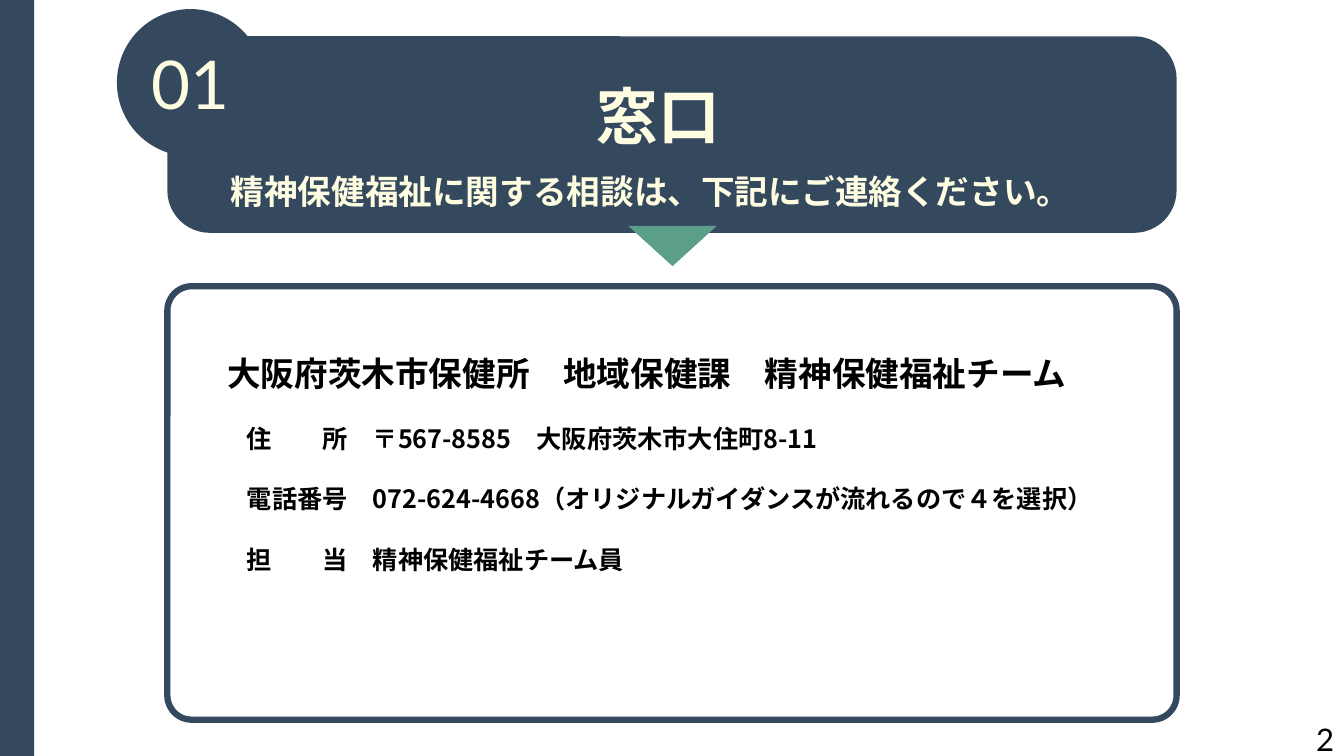
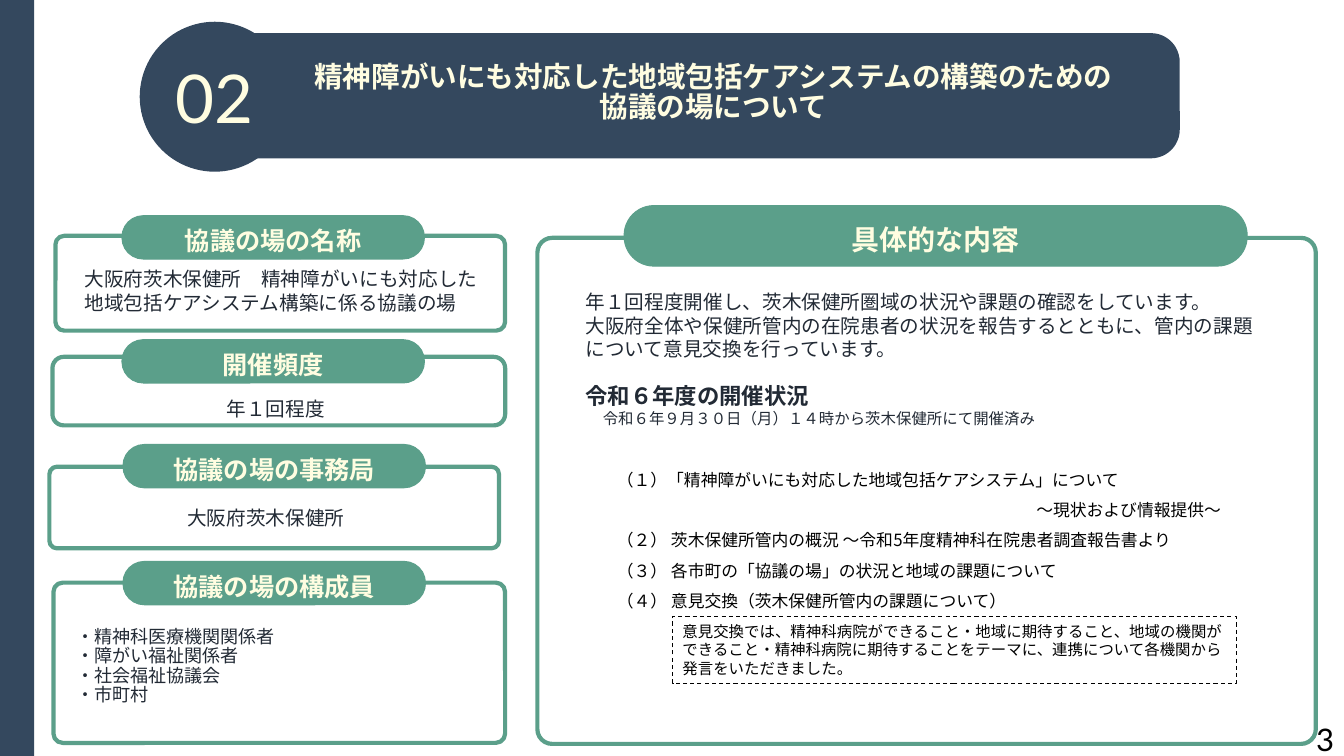
from lxml import etree
from pptx import Presentation
from pptx.dml.color import RGBColor
from pptx.enum.dml import MSO_LINE
from pptx.enum.shapes import MSO_SHAPE
from pptx.enum.text import MSO_ANCHOR, PP_ALIGN
from pptx.oxml.ns import qn
from pptx.util import Pt

PX = 9144  # EMU in one px, 100 px to the inch
COLORS = {"navy": "34485E", "green": "5B9F8A", "cream": "FFFDE1",
          "ink": "222A35", "black": "000000", "white": "FFFFFF"}
JAPANESE, LATIN, HEADING = "Noto Sans CJK JP", "Lato", "Roboto"
RECT, ROUND = MSO_SHAPE.RECTANGLE, MSO_SHAPE.ROUNDED_RECTANGLE
OVAL, TRIANGLE = MSO_SHAPE.OVAL, MSO_SHAPE.ISOSCELES_TRIANGLE
LEFT, CENTER, RIGHT = PP_ALIGN.LEFT, PP_ALIGN.CENTER, PP_ALIGN.RIGHT
TIGHT, SINGLE, WIDE = 0.9, 1.0, 1.5


def place(slide, box, preset=None, fill=None, line=None, weight=0.75, corner=None):
    """Add a preset shape, or a text box when there is no preset."""
    left, top, width, height = (value * PX for value in box)
    if preset is None:
        shape = slide.shapes.add_textbox(left, top, width, height)
        shape.text_frame.word_wrap = True
        return shape
    shape = slide.shapes.add_shape(preset, left, top, width, height)
    shape.shadow.inherit = False
    if corner is not None:
        shape.adjustments[0] = corner
    if fill:
        shape.fill.solid()
        shape.fill.fore_color.rgb = RGBColor.from_string(COLORS[fill])
    else:
        shape.fill.background()
    if line:
        shape.line.color.rgb = RGBColor.from_string(COLORS[line])
        shape.line.width = Pt(weight)
    else:
        shape.line.fill.background()
    return shape


def add_lines(shape, lines, size, color, bold=False, align=LEFT, spacing=SINGLE,
              font=JAPANESE, before=0, indent=0, right_indent=0):
    """Append one paragraph per line to the text of the shape."""
    frame = shape.text_frame
    for line in lines:
        paragraph = frame.add_paragraph() if frame.text else frame.paragraphs[0]
        paragraph.alignment = align
        paragraph.line_spacing = spacing
        paragraph.space_before = Pt(before)
        properties = paragraph._p.get_or_add_pPr()
        properties.set("marL", str(indent * PX))
        properties.set("marR", str(right_indent * PX))
        run = paragraph.add_run()
        run.text = line
        run.font.size = Pt(size)
        run.font.bold = bold
        run.font.name = font
        run.font.color.rgb = RGBColor.from_string(COLORS[color])
        run_properties = run._r.get_or_add_rPr()
        run_properties.set("lang", "ja-JP")
        etree.SubElement(run_properties, qn("a:ea")).set("typeface", JAPANESE)


presentation = Presentation()
presentation.slide_width = 1333 * PX
presentation.slide_height = 750 * PX

# Side band, banner, number badge, title and page number of every slide
headers = [
    {"number": "01", "page": "2", "banner": (166, 36, 1001, 195), "outline": None,
     "badge": (116, 9, 146, 146), "title_box": (328, 72, 650, 98),
     "title": ["窓口"], "size": 44, "spacing": SINGLE},
    {"number": "02", "page": "3", "banner": (166, 36, 1001, 118), "outline": "navy",
     "badge": (140, 23, 146, 146), "title_box": (294, 57, 827, 98),
     "title": ["精神障がいにも対応した地域包括ケアシステムの構築のための", "協議の場について"],
     "size": 20.4, "spacing": TIGHT},
]
slides = []
for header in headers:
    slide = presentation.slides.add_slide(presentation.slide_layouts[6])
    slides.append(slide)
    place(slide, (0, 0, 34, 750), RECT, "navy")
    place(slide, header["banner"], ROUND, "navy", header["outline"], 4.5, 0.216)
    title = place(slide, header["title_box"])
    add_lines(title, header["title"], header["size"], "cream", True, CENTER,
              header["spacing"])
    badge = place(slide, header["badge"], OVAL, "navy", header["outline"], 2)
    badge.text_frame.word_wrap = False
    badge.text_frame.vertical_anchor = MSO_ANCHOR.MIDDLE
    add_lines(badge, [header["number"]], 48, "cream", align=CENTER, font=LATIN)
    page = place(slide, (1022, 710, 311, 40))
    add_lines(page, [header["page"]], 22.2, "black", align=RIGHT, font=LATIN)

contact_slide, council_slide = slides

# Contact desk
subtitle = place(contact_slide, (219, 165, 913, 50))
add_lines(subtitle, ["精神保健福祉に関する相談は、下記にご連絡ください。"], 24, "cream", True,
          font=LATIN)
place(contact_slide, (166, 284, 1001, 430), ROUND, "white", "navy", 4.5, 0.056)
pointer = place(contact_slide, (623, 224, 88, 40), TRIANGLE, "green")
pointer.rotation = 180
contact = place(contact_slide, (185, 325, 963, 292))
add_lines(contact, ["大阪府茨木市保健所　地域保健課　精神保健福祉チーム"], 24, "black", True,
          CENTER, WIDE, HEADING, right_indent=50)
add_lines(contact, ["住　　所　〒567-8585　大阪府茨木市大住町8-11",
                    "電話番号　072-624-4668（オリジナルガイダンスが流れるので４を選択）",
                    "担　　当　精神保健福祉チーム員"],
          18, "black", True, before=21.6, indent=50)

# Council cards: frame, corner, pill, heading, heading size
cards = [
    ((55, 234, 446, 94), 0.092, (121, 214, 300, 43), "協議の場の名称", 18),
    ((52, 354, 449, 68), 0.165, (121, 337, 300, 43), "開催頻度", 18),
    ((49, 463, 446, 81), 0.092, (122, 441, 300, 43), "協議の場の事務局", 18),
    ((53, 578, 448, 159), 0.058, (122, 557, 300, 43), "協議の場の構成員", 18),
    ((533, 236, 772, 502), 0.029, (619, 204, 618, 60), "具体的な内容", 20),
]
for frame_box, corner, pill_box, heading, size in cards:
    place(council_slide, frame_box, ROUND, "white", "green", 3, corner)
    pill = place(council_slide, pill_box, ROUND, "green", "green", corner=0.491)
    pill.text_frame.vertical_anchor = MSO_ANCHOR.MIDDLE
    pill.text_frame.margin_top = 7 * PX
    pill.text_frame.margin_bottom = 0
    add_lines(pill, [heading], size, "cream", True, CENTER)

# Card texts: box, lines, size, alignment, line spacing
card_texts = [
    ((74, 260, 427, 59),
     ["大阪府茨木保健所　精神障がいにも対応した地域包括ケアシステム構築に係る協議の場"],
     14, LEFT, SINGLE),
    ((109, 389, 329, 41), ["年１回程度"], 14, CENTER, SINGLE),
    ((176, 497, 183, 39), ["大阪府茨木保健所"], 14, LEFT, SINGLE),
    ((66, 618, 329, 96),
     ["・精神科医療機関関係者", "・障がい福祉関係者", "・社会福祉協議会", "・市町村"],
     12.9, LEFT, TIGHT),
    ((571, 283, 688, 83),
     ["年１回程度開催し、茨木保健所圏域の状況や課題の確認をしています。",
      "大阪府全体や保健所管内の在院患者の状況を報告するとともに、"
      "管内の課題について意見交換を行っています。"],
     14, LEFT, SINGLE),
]
for box, lines, size, align, spacing in card_texts:
    add_lines(place(council_slide, box), lines, size, "ink", align=align, spacing=spacing)

# Meeting record and agenda
meeting = place(council_slide, (571, 374, 688, 276))
add_lines(meeting, ["令和６年度の開催状況"], 16, "ink", True)
add_lines(meeting, ["令和６年９月３０日（月）１４時から茨木保健所にて開催済み"], 11, "ink", indent=17)
add_lines(meeting, ["（１）「精神障がいにも対応した地域包括ケアシステム」について"], 12, "black",
          spacing=WIDE, before=23, indent=31)
add_lines(meeting, ["～現状および情報提供～"], 12, "black", align=RIGHT, spacing=WIDE,
          right_indent=38)
add_lines(meeting, ["（２） 茨木保健所管内の概況 ～令和5年度精神科在院患者調査報告書より",
                    "（３） 各市町の「協議の場」の状況と地域の課題について",
                    "（４） 意見交換（茨木保健所管内の課題について）"],
          12, "black", spacing=WIDE, indent=31)

remark = place(council_slide, (667, 612, 559, 66), RECT, line="black")
remark.line.dash_style = MSO_LINE.DASH
remark.text_frame.vertical_anchor = MSO_ANCHOR.TOP
add_lines(remark, ["意見交換では、精神科病院ができること・地域に期待すること、地域の機関が"
                   "できること・精神科病院に期待することをテーマに、連携について各機関から",
                   "発言をいただきました。"], 11, "black", font=LATIN)

presentation.save("out.pptx")
